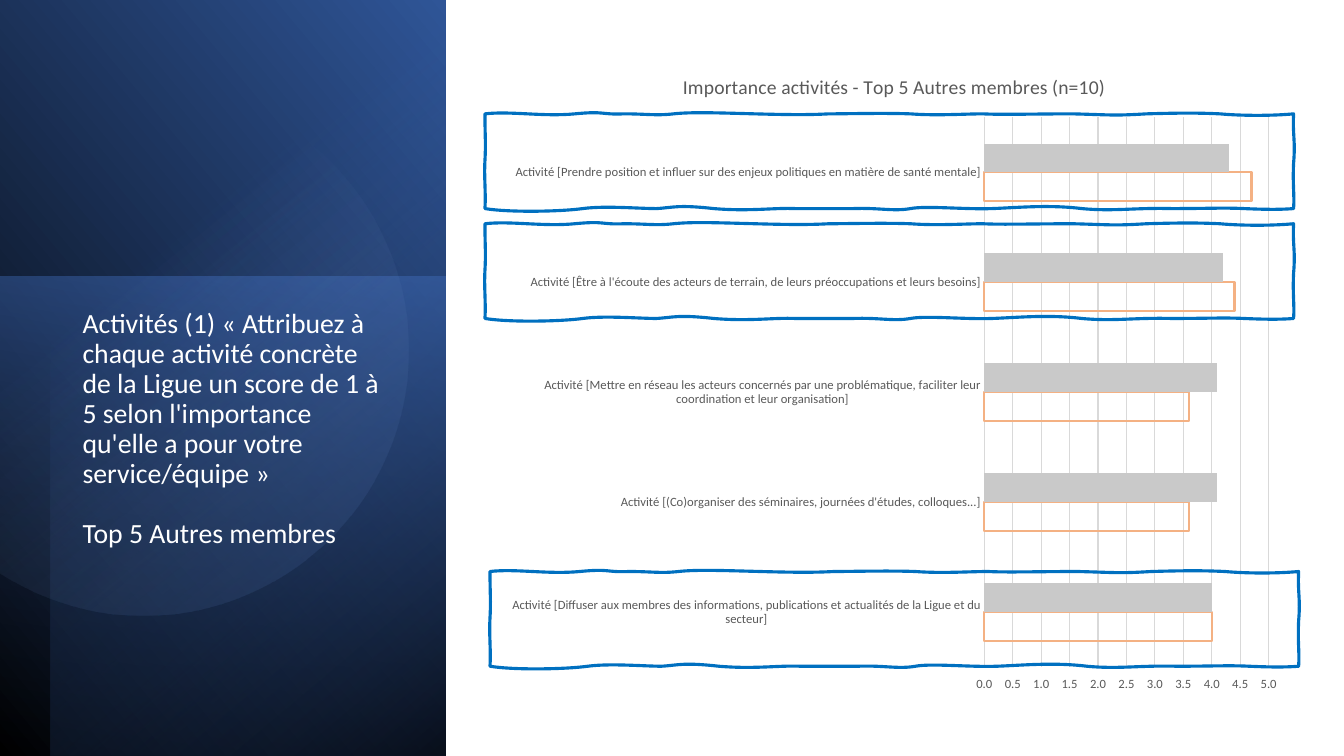
import math
from lxml import etree
from pptx import Presentation
from pptx import util as u
from pptx.chart.data import CategoryChartData
from pptx.dml.color import RGBColor
from pptx.enum import chart as ch, shapes, text
from pptx.oxml import parse_xml
from pptx.oxml.ns import nsdecls, qn

COLORS = {
    "black": "000000", "white": "FFFFFF", "navy": "203864", "deep": "2F5597",
    "blue": "4472C4", "pale": "8FAADC", "frame": "0070C0", "text": "595959",
    "grid": "D9D9D9", "peach": "F4B183", "gray": "C9C9C9",
}
FONT = "Calibri"
HEADING = [
    "Activités (1) « Attribuez à chaque activité concrète de la Ligue un score "
    "de 1 à 5 selon l'importance qu'elle a pour votre service/équipe »",
    "Top 5 Autres membres",
]
TITLE = "Importance activités - Top 5 Autres membres (n=10)"
# activity, outlined bar, gray bar; from the bottom up
SCORES = [
    ("Activité [Diffuser aux membres des informations, publications et "
     "actualités de la Ligue et du secteur]", 4.0, 4.0),
    ("Activité [(Co)organiser des séminaires, journées d'études, colloques...]",
     3.6, 4.1),
    ("Activité [Mettre en réseau les acteurs concernés par une problématique, "
     "faciliter leur coordination et leur organisation]", 3.6, 4.1),
    ("Activité [Être à l'écoute des acteurs de terrain, de leurs préoccupations "
     "et leurs besoins]", 4.4, 4.2),
    ("Activité [Prendre position et influer sur des enjeux politiques en matière "
     "de santé mentale]", 4.7, 4.3),
]
# box, rotation, flipped, gradient stops (position, colour, opacity), angle
PANELS = [
    ((-1.55, 1.55, 7.52, 4.42), 90, True,
     [(0, "black", 100), (100, "deep", 100)], 310),
    ((-0.17, 2.91, 4.76, 4.42), 270, False,
     [(0, "blue", 50), (100, "navy", 0)], 190),
    ((-1.29, 1.79, 7.5, 3.92), 270, True,
     [(0, "black", 59), (69, "blue", 0)], 220),
]
# the disc's outline as it stands on the slide; pairs are straight, sixes curved
DISC_BOX, DISC_TURN = (-0.82, 1.31, 5.26, 4.47), 101.6
DISC_STOPS = [(39, "pale", 0), (100, "deep", 26)]
DISC = [
    (1.43, .84), (1.6, .84, 1.78, .86, 1.96, .89),
    (3.38, 1.19, 4.29, 2.58, 4, 4), (3.71, 5.42, 2.32, 6.34, .9, 6.05),
    (.63, 5.99, .38, 5.9, .15, 5.77), (0, 5.68), (0, 1.26), (.2, 1.15),
    (.57, .95, .99, .84, 1.43, .84),
]
FRAMES = [(4.81, 1.13), (4.81, 2.22), (4.86, 5.67)]
FRAME_SIZE = (8.02, 0.93)
# hand-drawn frame, from its top left corner
WOBBLE = [
    (0, 0),
    (.25, -.03, .58, .03, .89, 0), (1.2, -.03, 1.14, .01, 1.38, 0),
    (1.61, 0, 1.69, .02, 1.87, 0), (2.05, -.02, 2.31, -.01, 2.68, 0),
    (3.04, .01, 3.23, .01, 3.41, 0), (3.58, 0, 3.95, -.01, 4.22, 0),
    (4.48, .02, 4.76, 0, 4.94, 0), (5.13, .01, 5.45, 0, 5.83, 0),
    (6.22, .01, 6.23, .02, 6.56, 0), (6.9, -.01, 7.08, -.01, 7.29, 0),
    (7.51, .02, 7.81, .02, 8.02, 0), (8.01, .22, 8.04, .26, 8.02, .49),
    (8.01, .71, 8.03, .8, 8.02, .94), (7.9, .95, 7.75, .95, 7.53, .94),
    (7.32, .93, 7.17, .94, 6.81, .94), (6.44, .93, 6.24, .97, 5.92, .94),
    (5.59, .9, 5.29, .93, 5.03, .94), (4.76, .95, 4.38, .91, 4.22, .94),
    (4.05, .97, 3.91, .93, 3.65, .94), (3.38, .94, 3.28, .94, 3.08, .94),
    (2.87, .93, 2.63, .97, 2.27, .94), (1.91, .9, 1.87, .93, 1.7, .94),
    (1.53, .94, 1.19, .91, .97, .94), (.75, .97, .24, .98, 0, .94),
    (.01, .77, -.01, .64, 0, .46), (.01, .29, 0, .23, 0, 0),
]


def rgb(name):
    return RGBColor.from_string(COLORS[name])


def inch(values):
    return [u.Inches(v) for v in values]


def style(font, size, color="text"):
    font.name, font.size, font.bold = FONT, u.Pt(size), False
    font.color.rgb = rgb(color)


def write(frame, lines, size=14, color="text", spacing=None, gap=0):
    for i, line in enumerate(lines):
        para = frame.add_paragraph() if i else frame.paragraphs[0]
        if spacing:
            para.line_spacing = spacing
        if i:
            para.space_before = u.Pt(gap)
        run = para.add_run()
        run.text = line
        style(run.font, size, color)


def shade(shape, stops, angle):
    """Give a shape a gradient with opacities and no line."""
    shape.shadow.inherit = False
    shape.line.fill.background()
    shape.fill.background()
    marks = "".join(
        f'<a:gs pos="{pos * 1000}"><a:srgbClr val="{COLORS[name]}">'
        f'<a:alpha val="{alpha * 1000}"/></a:srgbClr></a:gs>'
        for pos, name, alpha in stops)
    grad = parse_xml(
        f'<a:gradFill {nsdecls("a")} rotWithShape="1"><a:gsLst>{marks}</a:gsLst>'
        f'<a:lin ang="{angle * 60000}" scaled="0"/></a:gradFill>')
    props = shape._element.spPr
    props.replace(props.find(qn("a:noFill")), grad)


def outline(slide, steps, box):
    """Draw steps, measured from the box's corner, with Bézier curves."""
    ends = [inch(step[-2:]) for step in steps]
    build = slide.shapes.build_freeform(*ends[0])
    build.add_line_segments(ends[1:], close=True)
    shape = build.convert_to_shape()
    shape.left, shape.top, shape.width, shape.height = inch(box)
    trail = shape._element.spPr.find(".//" + qn("a:path"))
    trail.set("w", str(shape.width))
    trail.set("h", str(shape.height))
    for node, step in zip(list(trail), steps):
        if len(step) == 6:
            curve = etree.SubElement(trail, qn("a:cubicBezTo"))
            trail.replace(node, curve)
            node = curve
        for old in list(node):
            node.remove(old)
        for x, y in zip(inch(step[::2]), inch(step[1::2])):
            etree.SubElement(node, qn("a:pt"), x=str(x), y=str(y))
    return shape


def unturn(step, box, turn):
    """Turn a step back about the box's centre, measured from its corner."""
    left, top, wide, high = box
    c, s = math.cos(math.radians(turn)), math.sin(math.radians(turn))
    out = []
    for x, y in zip(step[::2], step[1::2]):
        dx, dy = x - left - wide / 2, y - top - high / 2
        out += [wide / 2 + c * dx + s * dy, high / 2 - s * dx + c * dy]
    return out


def add_scores(slide):
    data = CategoryChartData(number_format="0.0")
    names, *series = zip(*SCORES)
    data.categories = names
    for i, vals in enumerate(series, 1):
        data.add_series(f"Series {i}", vals)
    chart = slide.shapes.add_chart(
        ch.XL_CHART_TYPE.BAR_CLUSTERED, *inch((4.92, 0.51, 7.9, 6.48)), data).chart
    style(chart.font, 10, "black")
    chart.has_legend = False
    write(chart.chart_title.text_frame, [TITLE])
    chart.chart_title.include_in_layout = False
    plot = chart.plots[0]
    plot.gap_width, plot.overlap, plot.vary_by_categories = 182, 0, False
    bare, solid = plot.series
    bare.format.fill.background()
    bare.format.line.color.rgb = rgb("peach")
    bare.format.line.width = u.Pt(1.5)
    solid.format.fill.solid()
    solid.format.fill.fore_color.rgb = rgb("gray")
    cat, val = chart.category_axis, chart.value_axis
    for axis in (cat, val):
        style(axis.tick_labels.font, 9)
    cat.major_tick_mark = ch.XL_TICK_MARK.NONE
    val.minimum_scale, val.maximum_scale, val.major_unit = 0, 5, 0.5
    val.tick_labels.number_format = "0.0"
    val.tick_labels.number_format_is_linked = False
    val.format.line.fill.background()
    for line in (cat.format.line, val.major_gridlines.format.line):
        line.color.rgb = rgb("grid")
        line.width = u.Pt(0.75)
    area = chart._chartSpace.chart.plotArea
    for old in area.findall(qn("c:layout")):
        area.remove(old)
    layout = parse_xml(f'<c:layout {nsdecls("c")}><c:manualLayout/></c:layout>')
    for tag, value in [("layoutTarget", "inner"), ("xMode", "edge"),
                       ("yMode", "edge"), ("x", 0.613), ("y", 0.101),
                       ("w", 0.357), ("h", 0.842)]:
        etree.SubElement(layout[0], qn("c:" + tag)).set("val", str(value))
    area.insert(0, layout)


def main():
    prs = Presentation()
    prs.slide_width, prs.slide_height = inch((13.33, 7.5))
    slide = prs.slides.add_slide(prs.slide_layouts[6])
    for box, turn, flip, stops, angle in PANELS:
        panel = slide.shapes.add_shape(shapes.MSO_SHAPE.RECTANGLE, *inch(box))
        panel.rotation = turn
        if flip:
            panel._element.spPr.xfrm.set("flipH", "1")
        shade(panel, stops, angle)
    disc = outline(slide, [unturn(s, DISC_BOX, DISC_TURN) for s in DISC], DISC_BOX)
    disc.rotation = DISC_TURN
    shade(disc, DISC_STOPS, 310)

    head = slide.shapes.add_textbox(*inch((0.72, 3.02, 3.15, 3.36))).text_frame
    head.word_wrap = True
    head.vertical_anchor = text.MSO_ANCHOR.TOP
    write(head, HEADING, size=19.8, color="white", spacing=0.9, gap=21.6)

    add_scores(slide)
    for corner in FRAMES:
        frame = outline(slide, WOBBLE, corner + FRAME_SIZE)
        frame.shadow.inherit = False
        frame.fill.background()
        frame.line.color.rgb = rgb("frame")
        frame.line.width = u.Pt(2.25)
    prs.save("out.pptx")


if __name__ == "__main__":
    main()
